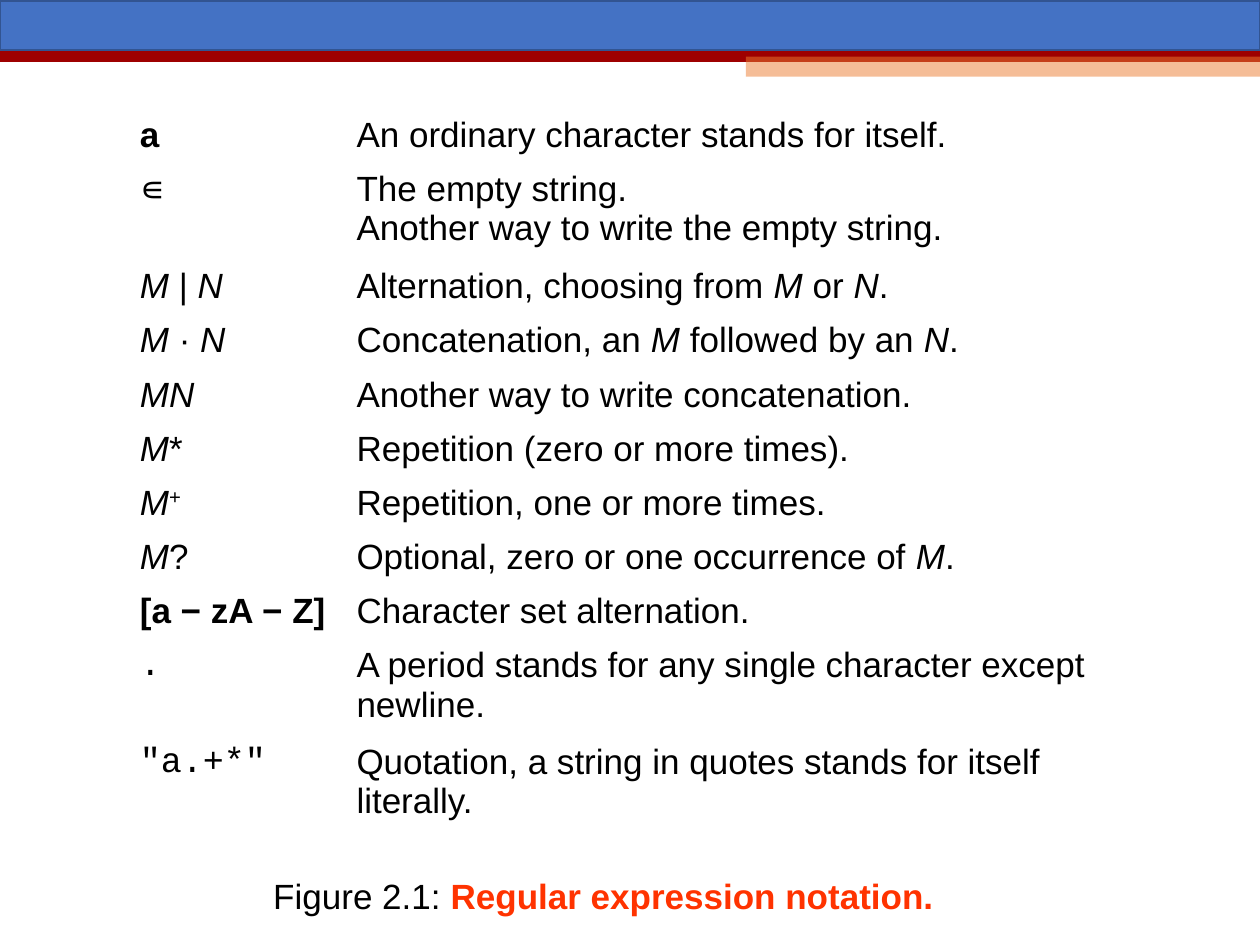
from lxml.etree import SubElement
from pptx import Presentation
from pptx.dml.color import RGBColor
from pptx.enum.shapes import MSO_CONNECTOR, MSO_SHAPE
from pptx.enum.text import MSO_ANCHOR, MSO_AUTO_SIZE
from pptx.oxml.ns import qn
from pptx.util import Inches, Pt

BASE = {"name": "Arial", "size": Pt(20), "bold": False, "italic": False}
BOLD = {"bold": True}
MONO = {"name": "Courier New"}
ROWS = [
    ("a", "An ordinary character stands for itself.", BOLD),
    ("∊", "The empty string.\nAnother way to write the empty string.", {}),
    ("_M_ | _N_", "Alternation, choosing from _M_ or _N_.", {}),
    ("_M_ · _N_", "Concatenation, an _M_ followed by an _N_.", {}),
    ("_MN_", "Another way to write concatenation.", {}),
    ("_M_*", "Repetition (zero or more times).", {}),
    ("_M_+", "Repetition, one or more times.", {"raise": "30000"}),
    ("_M_?", "Optional, zero or one occurrence of _M_.", {}),
    ("[a − zA − Z]", "Character set alternation.", BOLD),
    (".", "A period stands for any single character except newline.", MONO),
    ('"a.+*"', "Quotation, a string in quotes stands for itself literally.", MONO),
]
TALL = (1, 9, 10)


def color(code):
    return RGBColor.from_string(code)


def add_run(para, text, code="000000", **form):
    run = para.add_run()
    run.text = text
    lift = form.pop("raise", None)
    for key, value in {**BASE, **form}.items():
        setattr(run.font, key, value)
    run.font.color.rgb = color(code)
    if lift:
        run._r.get_or_add_rPr().set("baseline", lift)


def add_break(para, size):
    para.add_line_break()
    SubElement(para._p[-1], qn("a:rPr"), sz=str(size * 100))


def write(para, text, form):
    for row, line in enumerate(text.split("\n")):
        if row:
            add_break(para, 20)
        for spot, part in enumerate(line.split("_")):
            if part:
                add_run(para, part, **({"italic": True} if spot % 2 else form))


def add_rule(slide):
    rule = slide.shapes.add_connector(
        MSO_CONNECTOR.STRAIGHT, 0, Inches(0.44), Inches(10), Inches(0.44))
    rule.line.color.rgb = color("9E0000")
    rule.line.width = Pt(7.5)
    SubElement(rule._element.spPr, qn("a:effectLst"))


def add_bar(slide, box, fill, edge=None, alpha=None):
    bar = slide.shapes.add_shape(MSO_SHAPE.RECTANGLE, *map(Inches, box))
    bar.shadow.inherit = False
    bar.fill.solid()
    bar.fill.fore_color.rgb = color(fill)
    if alpha:
        tint = bar._element.spPr.find(qn("a:solidFill"))[0]
        SubElement(tint, qn("a:alpha"), val=str(alpha * 1000))
    if edge:
        bar.line.color.rgb = color(edge)
        bar.line.width = Pt(1)
    else:
        bar.line.fill.background()


def add_grid(slide):
    box = map(Inches, (1.01, 0.87, 8.17, 5.77))
    grid = slide.shapes.add_table(len(ROWS), 2, *box).table
    grid.first_row = grid.horz_banding = False
    for col, width in zip(grid.columns, (1.72, 6.45)):
        col.width = Inches(width)
    for row, (sign, sense, form) in enumerate(ROWS):
        grid.rows[row].height = Inches(0.77 if row in TALL else 0.43)
        for col, (text, style) in enumerate(((sign, form), (sense, {}))):
            cell = grid.cell(row, col)
            cell.fill.background()
            write(cell.text_frame.paragraphs[0], text, style)


def add_note(slide):
    box = map(Inches, (2.07, 6.74, 5.51, 0.58))
    frame = slide.shapes.add_textbox(*box).text_frame
    form = {"word_wrap": False, "vertical_anchor": MSO_ANCHOR.MIDDLE,
            "auto_size": MSO_AUTO_SIZE.SHAPE_TO_FIT_TEXT}
    for key, value in form.items():
        setattr(frame, key, value)
    para = frame.paragraphs[0]
    add_break(para, 9)
    add_run(para, "Figure 2.1: ")
    add_run(para, "Regular expression notation.", "FF3300", **BOLD)


def main():
    deck = Presentation()
    deck.slide_width, deck.slide_height = Inches(10), Inches(7.5)
    slide = deck.slides.add_slide(deck.slide_layouts[6])
    add_rule(slide)
    add_bar(slide, (5.92, 0.45, 4.08, 0.16), "ED7D31", alpha=50)
    add_bar(slide, (0, 0.01, 10, 0.39), "4472C4", edge="325491")
    add_grid(slide)
    add_note(slide)
    deck.save("out.pptx")


if __name__ == "__main__":
    main()
